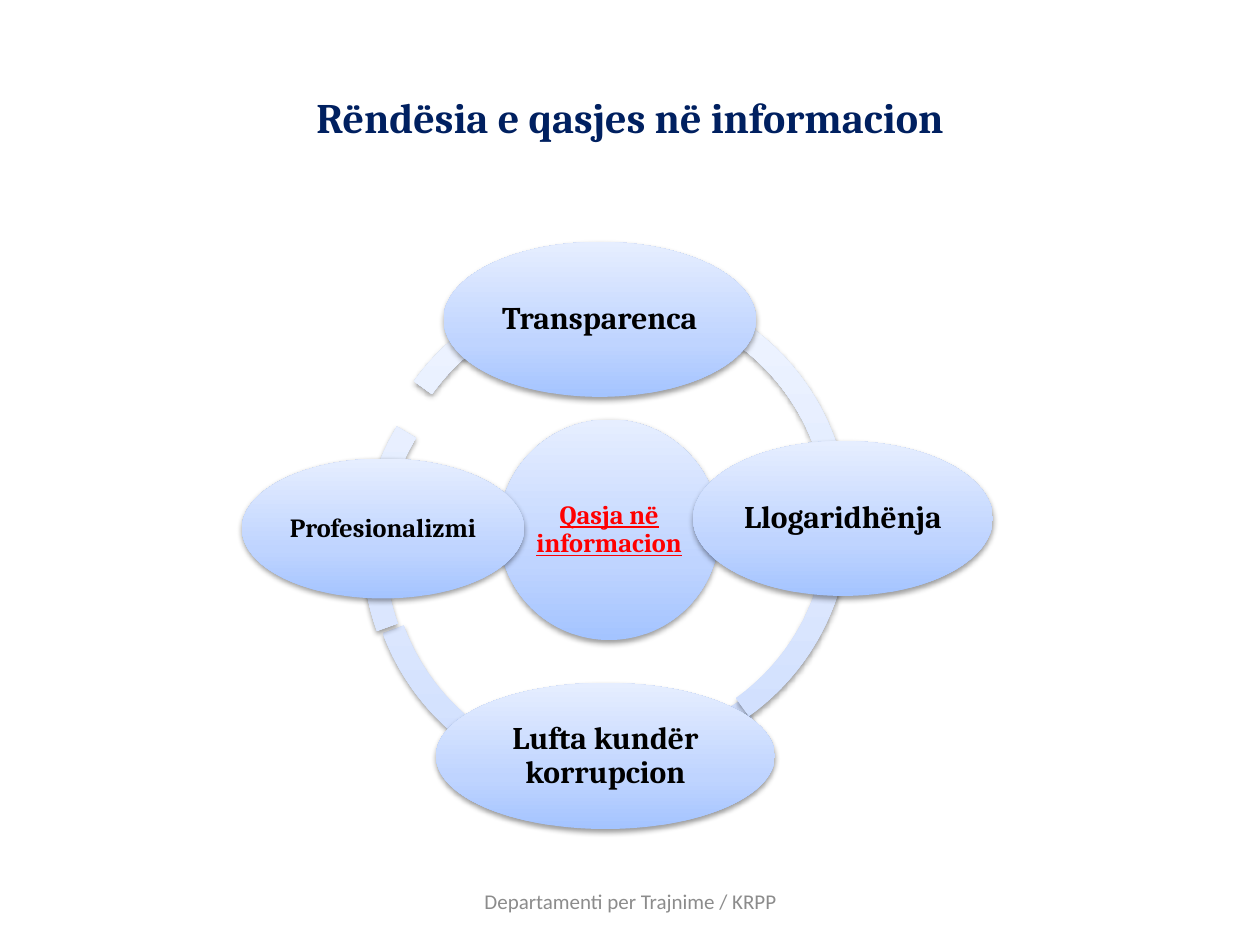
from lxml import etree
from pptx import Presentation
from pptx.dml.color import RGBColor
from pptx.enum.shapes import MSO_SHAPE as SHAPE
from pptx.enum.text import MSO_ANCHOR as ANCHOR, PP_ALIGN as ALIGN
from pptx.oxml import parse_xml
from pptx.oxml.ns import nsdecls, qn
from pptx.util import Inches, Pt

RING_STOPS = [(0, "CDDDFE"), (35, "DBE6FE"), (100, "F0F5FF")]
NODE_STOPS = [(0, "A4C4FF"), (35, "BFD4FF"), (100, "E6EEFF")]
RING_SIZE = 3.81
RING_THICKNESS = 0.046

ARCS = [
    (2.92, 2.46, 111.5, 159.66),
    (2.99, 2.23, 55.55, 106.89),
    (2.93, 2.23, 215.6, 54.4),
    (2.88, 2.46, 160.28, 210.91),
]
NODES = [
    ("Qasja në informacion", (3.96, 3.33, 1.75, 1.75), 15, "FF0000", True),
    ("Transparenca", (3.52, 1.92, 2.48, 1.23), 18, "000000", False),
    ("Llogaridhënja", (5.5, 3.5, 2.38, 1.23), 18, "000000", False),
    ("Lufta kundër korrupcion", (3.46, 5.42, 2.69, 1.16), 18, "000000", False),
    ("Profesionalizmi", (1.92, 3.64, 2.24, 1.11), 15, "000000", False),
]


def color(value):
    """Turn a hex string into a colour."""
    return RGBColor.from_string(value)


def set_gradient(sp, stops):
    """Fill a shape with colour stops that run from bottom to top."""
    sp.fill.gradient()
    sp.fill.gradient_angle = 90
    gs_list = next(sp.fill._xPr.iter(qn("a:gsLst")))
    for gs in list(gs_list):
        gs_list.remove(gs)
    for position, value in stops:
        gs = etree.SubElement(gs_list, qn("a:gs"), pos=str(position * 1000))
        etree.SubElement(gs, qn("a:srgbClr"), val=value)


def set_shadow(sp):
    """Give a shape a soft shadow below it."""
    sp.shadow.inherit = False
    effects = sp._element.spPr.find(qn("a:effectLst"))
    effects.append(parse_xml(
        f'<a:outerShdw {nsdecls("a")} blurRad="40000" dist="20000" dir="5400000" '
        'rotWithShape="0"><a:srgbClr val="000000"><a:alpha val="38000"/>'
        '</a:srgbClr></a:outerShdw>'))


def set_text(sp, text, size, font, value, bold=False, underline=False):
    """Write one centred paragraph into a shape."""
    tf = sp.text_frame
    tf.word_wrap = True
    tf.vertical_anchor = ANCHOR.MIDDLE
    p = tf.paragraphs[0]
    p.text = text
    p.alignment = ALIGN.CENTER
    p.font.size = Pt(size)
    p.font.name = font
    p.font.bold = bold
    p.font.underline = underline
    p.font.color.rgb = color(value)


def add_label(s, box, *style, **options):
    """Add a text box."""
    sp = s.shapes.add_textbox(*map(Inches, box))
    set_text(sp, *style, **options)


def add_graded_shape(s, kind, box, stops):
    """Add an unlined shape with a gradient and a shadow."""
    sp = s.shapes.add_shape(kind, *map(Inches, box))
    set_gradient(sp, stops)
    sp.line.fill.background()
    set_shadow(sp)
    return sp


def add_arc(s, left, top, start, end):
    """Add one part of the ring, with its angles in degrees."""
    box = (left, top, RING_SIZE, RING_SIZE)
    sp = add_graded_shape(s, SHAPE.BLOCK_ARC, box, RING_STOPS)
    for i, value in enumerate((start * 0.6, end * 0.6, RING_THICKNESS)):
        sp.adjustments[i] = value


def add_node(s, text, box, size, value, underline):
    """Add an ellipse with its text."""
    sp = add_graded_shape(s, SHAPE.OVAL, box, NODE_STOPS)
    set_text(sp, text, size, "Cambria", value, bold=True, underline=underline)
    tf = sp.text_frame
    tf.margin_left = tf.margin_right = Inches(0.02)
    tf.margin_top = tf.margin_bottom = Inches(0.02)
    tf.paragraphs[0].line_spacing = 0.9


def main():
    """Build the slide and save it."""
    prs = Presentation()
    prs.slide_width, prs.slide_height = Inches(10), Inches(7.5)
    s = prs.slides.add_slide(prs.slide_layouts[6])
    add_label(s, (0.5, 0.3, 9, 1.25), "Rëndësia e qasjes në informacion",
              24, "Cambria", "002060", bold=True)
    for arc in ARCS:
        add_arc(s, *arc)
    for node in NODES:
        add_node(s, *node)
    add_label(s, (3.42, 6.95, 3.17, 0.4), "Departamenti per Trajnime / KRPP",
              12, "Calibri", "8C8C8C")
    prs.save("out.pptx")


if __name__ == "__main__":
    main()
